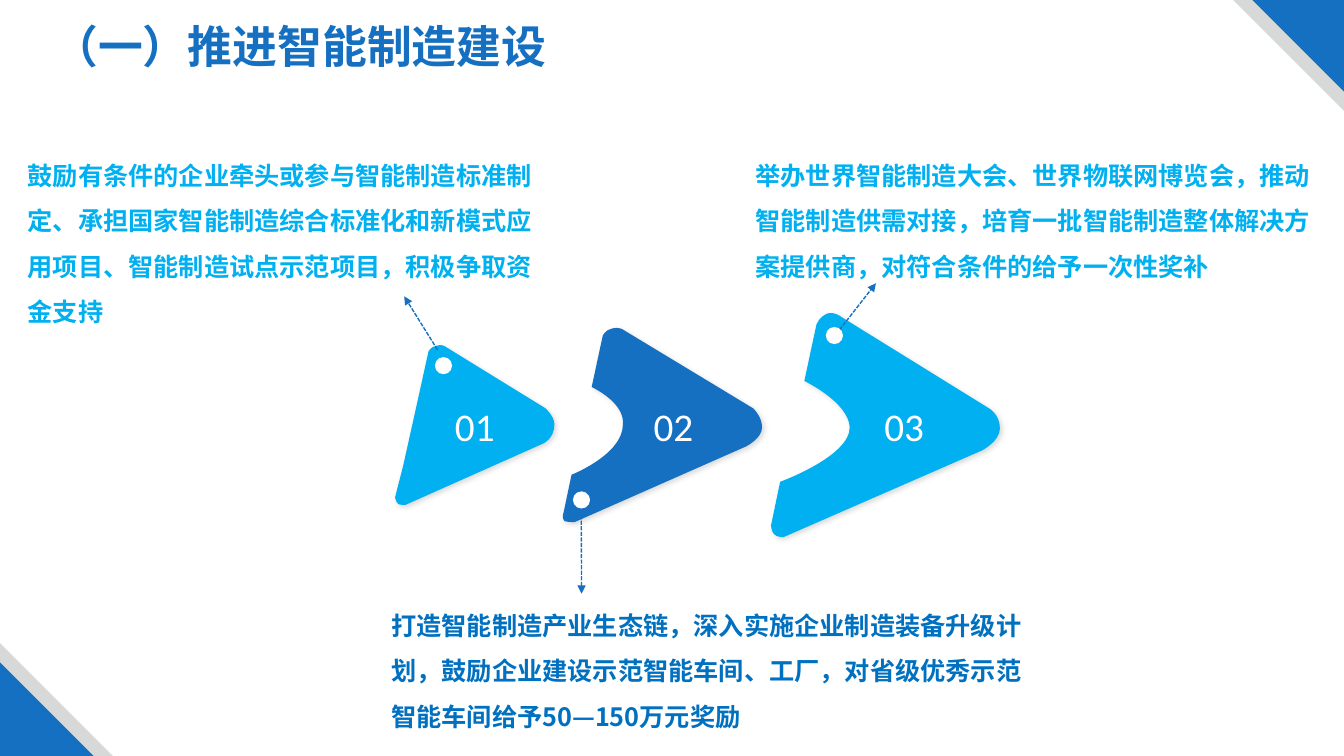
from lxml import etree
from pptx import Presentation
from pptx.dml.color import RGBColor
from pptx.enum.dml import MSO_LINE
from pptx.enum.shapes import MSO_CONNECTOR, MSO_SHAPE
from pptx.enum.text import MSO_ANCHOR, MSO_AUTO_SIZE, PP_ALIGN
from pptx.oxml.ns import qn
from pptx.util import Inches, Pt

TRIANGLE, OVAL = MSO_SHAPE.RIGHT_TRIANGLE, MSO_SHAPE.OVAL
STRAIGHT, SYS_DASH = MSO_CONNECTOR.STRAIGHT, MSO_LINE.SQUARE_DOT
LEFT, CENTER = PP_ALIGN.LEFT, PP_ALIGN.CENTER
TOP, MIDDLE = MSO_ANCHOR.TOP, MSO_ANCHOR.MIDDLE
GROW = MSO_AUTO_SIZE.SHAPE_TO_FIT_TEXT

COLORS = {"blue": "1570C1", "sky": "00B0F0", "deep": "0070C0",
          "gray": "D7D8D8", "white": "FFFFFF", "black": "000000"}
HEAD_FONT, NUMBER_FONT = "Noto Sans CJK SC", "Calibri"
CELL = 0.1  # inches per grid column and row
COLS, ROWS = 133.33, 75
DOT = 1.7

# Outline points: (x, y) is a straight side, six numbers are a Bezier curve.
ARROWS = [
    ("03", "sky", 0.47, [
        (99.2, 42.5), (99.2, 43.8, 97.4, 44.7, 97.4, 44.7), (77.7, 53.3),
        (77.7, 53.3, 77.1, 53.3, 76.8, 53), (76.5, 52.7, 76.5, 52.1, 76.5, 52.1),
        (77.4, 47.8), (77.4, 47.8, 84.3, 45.3, 84.3, 42.4),
        (84.2, 39.9, 79.8, 37.8, 79.8, 37.8), (81, 32.2),
        (81, 32.2, 81.3, 31.4, 82.1, 31.1), (82.8, 30.9, 83.4, 31.4, 83.4, 31.4),
        (98.1, 40.5), (98.1, 40.5, 99.2, 41.1, 99.2, 42.5)]),
    ("02", "blue", 0.31, [
        (75.6, 42.4), (75.6, 43.5, 74, 44.3, 74, 44.3), (57, 51.8),
        (57, 51.8, 56.3, 51.8, 56, 51.7), (55.7, 51.4, 55.9, 50.9, 55.9, 50.9),
        (56.7, 47.1), (56.7, 47.1, 61.8, 45.1, 61.8, 42.1),
        (62, 39.9, 58.7, 38.4, 58.7, 38.4), (59.8, 33.3),
        (59.8, 33.3, 60.1, 32.7, 60.7, 32.6), (61.4, 32.4, 61.8, 32.7, 61.8, 32.7),
        (74.7, 40.5), (74.7, 40.5, 75.6, 41.3, 75.6, 42.4)]),
    ("01", "sky", 0.1, [
        (41.6, 39), (42.5, 34.9), (42.5, 34.9, 42.7, 34.4, 43.3, 34.3),
        (43.8, 34.1, 44.2, 34.4, 44.2, 34.4), (54.1, 40.5),
        (54.1, 40.5, 55, 41.3, 55, 42.1), (55, 43.5, 53.9, 44, 53.9, 44),
        (40.2, 50.1), (40.2, 50.1, 39.7, 50.1, 39.5, 50),
        (39.2, 49.7, 39.2, 49.3, 39.2, 49.3), (40, 46.2), (41.6, 39)]),
]
LEADERS = [((43.4, 34.7), (40.1, 29.4)), ((82.6, 33.6), (86.9, 28.1)),
           ((57.66, 50), (57.7, 58.9))]
DOTS = [(43.15, 35.43), (56.84, 48.75), (81.93, 32.44)]
NOTES = [
    ((1.76, 13.92, 53.1, 19.2), "sky",
     "鼓励有条件的企业牵头或参与智能制造标准制定、承担国家智能制造综合标准化和新模式应用项目、"
     "智能制造试点示范项目，积极争取资金支持"),
    ((37.84, 58.56, 66.4, 14.6), "deep",
     "打造智能制造产业生态链，深入实施企业制造装备升级计划，鼓励企业建设示范智能车间、工厂，"
     "对省级优秀示范智能车间给予50—150万元奖励"),
    ((73.96, 13.92, 58.3, 14.6), "sky",
     "举办世界智能制造大会、世界物联网博览会，推动智能制造供需对接，培育一批智能制造整体解决方案提供商，"
     "对符合条件的给予一次性奖补"),
]


def grid(*cells):
    return [Inches(c * CELL) for c in cells]


def rgb(name):
    return RGBColor.from_string(COLORS[name])


def bend(sp, steps):
    """Turn the sides that have control points into Bezier curves."""
    sides = list(sp._element.iter(qn("a:lnTo")))
    for side, step in zip(sides, steps):
        if len(step) == 6:
            curve = etree.Element(qn("a:cubicBezTo"))
            coords = grid(*step)
            for x, y in zip(coords[::2], coords[1::2]):
                etree.SubElement(curve, qn("a:pt"), x=str(x - sp.left), y=str(y - sp.top))
            side.getparent().replace(side, curve)


def write(sp, text, size, color, font=HEAD_FONT, bold=False, align=LEFT,
          anchor=TOP, spacing=None, inset=0.1):
    tf = sp.text_frame
    tf.word_wrap = True
    tf.vertical_anchor = anchor
    tf.margin_left = Inches(inset)
    p = tf.paragraphs[0]
    p.alignment = align
    p.line_spacing = spacing
    r = p.add_run()
    r.text = text
    r.font.size, r.font.bold, r.font.name = Pt(size), bold, font
    r.font.color.rgb = rgb(color)
    etree.SubElement(r.font._element, qn("a:ea"), typeface=font)


class Deck:
    def __init__(self):
        self.prs = Presentation()
        self.prs.slide_width, self.prs.slide_height = grid(COLS, ROWS)
        self.slide = self.prs.slides.add_slide(self.prs.slide_layouts[6])
        self.shapes = self.slide.shapes

    def paint(self, sp, color):
        sp.shadow.inherit = False
        sp.fill.solid()
        sp.fill.fore_color.rgb = rgb(color)
        sp.line.fill.background()
        return sp

    def shape(self, kind, x, y, w, h, color, rotation=0):
        sp = self.paint(self.shapes.add_shape(kind, *grid(x, y, w, h)), color)
        sp.rotation = rotation

    def text(self, box, text, size, color, **fmt):
        sp = self.shapes.add_textbox(*grid(*box))
        write(sp, text, size, color, **fmt)
        sp.text_frame.auto_size = GROW

    def arrow(self, number, color, inset, outline):
        start, *steps = outline
        builder = self.shapes.build_freeform(*grid(*start), scale=1.0)
        builder.add_line_segments([grid(*step[-2:]) for step in steps], close=True)
        sp = self.paint(builder.convert_to_shape(), color)
        bend(sp, steps)
        effects = sp._element.spPr.find(qn("a:effectLst"))
        shadow = etree.SubElement(effects, qn("a:outerShdw"), blurRad=str(Pt(4)),
                                  dist=str(Pt(2)), dir=str(45 * 60000), algn="tl")
        tint = etree.SubElement(shadow, qn("a:srgbClr"), val=COLORS["black"])
        etree.SubElement(tint, qn("a:alpha"), val="15000")
        write(sp, number, 28, "white", font=NUMBER_FONT, align=CENTER,
              anchor=MIDDLE, inset=inset)

    def leader(self, start, end):
        line = self.shapes.add_connector(STRAIGHT, *grid(*start, *end))
        line.line.color.rgb = rgb("blue")
        line.line.width = Pt(1)
        line.line.dash_style = SYS_DASH
        etree.SubElement(line.line._get_or_add_ln(), qn("a:tailEnd"), type="triangle")
        etree.SubElement(line._element.spPr, qn("a:effectLst"))


def main():
    deck = Deck()
    for side, color in ((11, "gray"), (9.1, "blue")):
        deck.shape(TRIANGLE, COLS - side, 0, side, side, color, rotation=180)
    for side, color in ((11.2, "gray"), (9.3, "blue")):
        deck.shape(TRIANGLE, 0, ROWS - side, side, side, color)
    deck.text((0.17, 1.34, 59.2, 6.4), "（一）推进智能制造建设", 32, "blue",
              bold=True, align=CENTER)
    for arrow in ARROWS:
        deck.arrow(*arrow)
    for start, end in LEADERS:
        deck.leader(start, end)
    for x, y in DOTS:
        deck.shape(OVAL, x, y, DOT, DOT, "white")
    for box, color, note in NOTES:
        deck.text(box, note, 18, color, bold=True, spacing=1.5)
    deck.prs.save("out.pptx")


if __name__ == "__main__":
    main()
